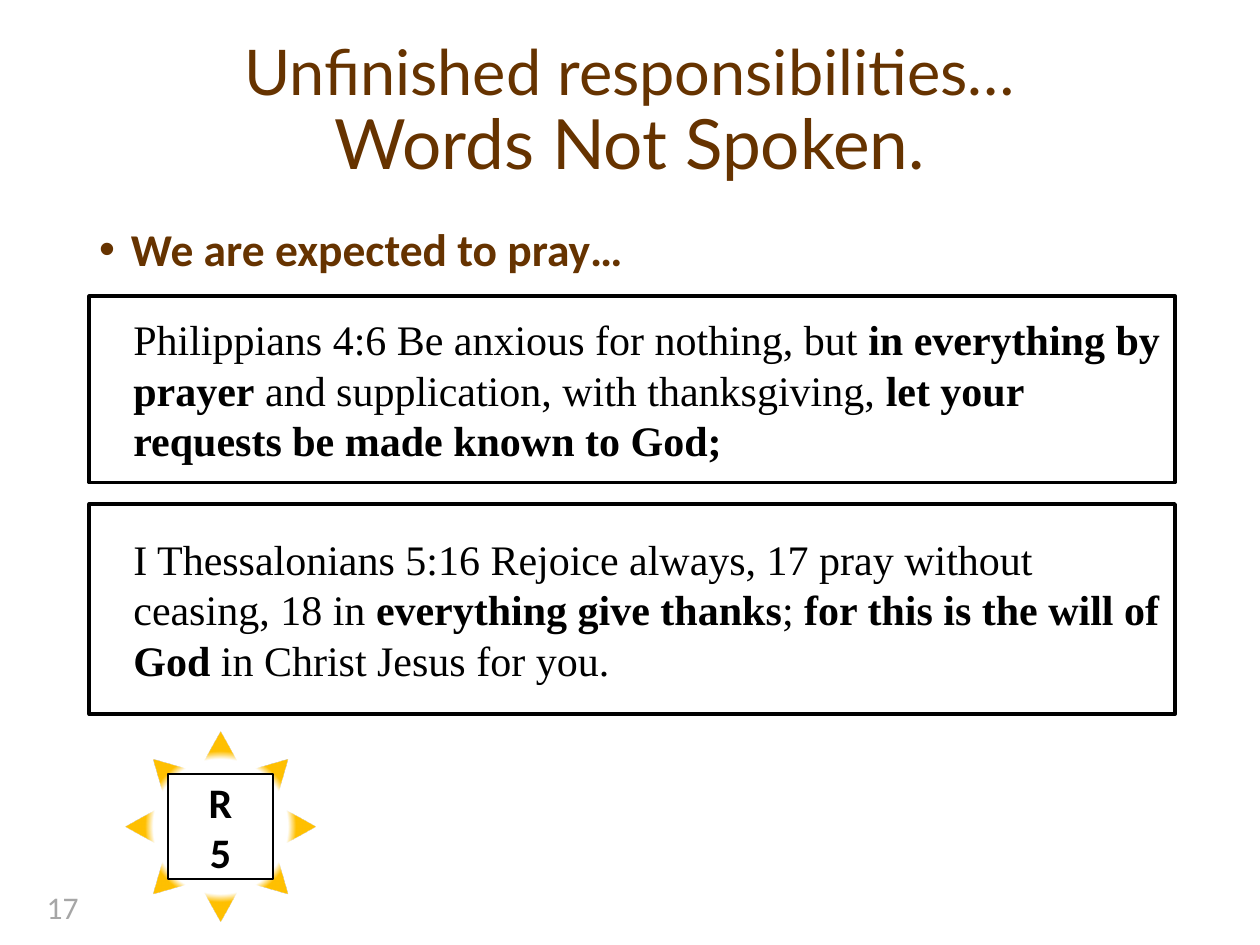
"""Build the slide on unfinished responsibilities and words not spoken."""
from lxml import etree
from pptx import Presentation
from pptx.dml.color import RGBColor
from pptx.enum.shapes import MSO_SHAPE
from pptx.enum.text import MSO_ANCHOR, MSO_AUTO_SIZE, PP_ALIGN
from pptx.oxml import parse_xml
from pptx.oxml.ns import nsdecls, qn
from pptx.util import Cm, Pt

BROWN = RGBColor(0x66, 0x33, 0x00)
BLACK = RGBColor(0x00, 0x00, 0x00)
WHITE = RGBColor(0xFF, 0xFF, 0xFF)
GREY = RGBColor(0xA6, 0xA6, 0xA6)
RECTANGLE, SUN = MSO_SHAPE.RECTANGLE, MSO_SHAPE.SUN
MIDDLE = MSO_ANCHOR.MIDDLE
CENTER, LEFT = PP_ALIGN.CENTER, PP_ALIGN.LEFT
FIXED = MSO_AUTO_SIZE.NONE
INDENT = Cm(0.64)
GLOW = f"""<a:gradFill {nsdecls("a")} rotWithShape="1"><a:gsLst>
<a:gs pos="0"><a:srgbClr val="FFFF00"><a:alpha val="0"/></a:srgbClr></a:gs>
<a:gs pos="50000"><a:srgbClr val="FFC000"><a:alpha val="0"/></a:srgbClr></a:gs>
<a:gs pos="56000"><a:srgbClr val="FFC000"/></a:gs></a:gsLst>
<a:path path="circle"><a:fillToRect l="50000" t="50000" r="50000" b="50000"/></a:path>
</a:gradFill>"""


class SlideWriter:
    """Hold the text style and the current page."""

    def __init__(self, page):
        self.page = page
        self.heading_font = "Lato"
        self.label_font = "Calibri"
        self.verse_font = "Times New Roman"

    def span(self, para, text, size, font, color, bold=False):
        """Add one formatted run."""
        span = para.add_run()
        span.text = text
        span.font.size = Pt(size)
        span.font.name = font
        span.font.bold = bold
        span.font.color.rgb = color

    def title(self, lines, left, top, width, height):
        """Fill the title placeholder with sized lines."""
        box = self.page.shapes.title
        box.left, box.top, box.width, box.height = map(Cm, (left, top, width, height))
        frame = box.text_frame
        frame.auto_size = FIXED
        frame.vertical_anchor = MIDDLE
        para = frame.paragraphs[0]
        para.alignment = CENTER
        para.line_spacing = 0.9
        for index, (text, size) in enumerate(lines):
            if index:
                para.add_line_break()
            self.span(para, text, size, self.heading_font, BROWN)

    def text(self, text, left, top, width, height, size, color, bold=False):
        """Add a text box and return its paragraph."""
        box = self.page.shapes.add_textbox(*map(Cm, (left, top, width, height)))
        box.text_frame.word_wrap = True
        para = box.text_frame.paragraphs[0]
        self.span(para, text, size, self.label_font, color, bold)
        return para

    def bullet(self, text, left, top, width, height):
        """Add a bulleted statement."""
        para = self.text(text, left, top, width, height, 26, BROWN, True)
        para.line_spacing = 0.9
        properties = para._p.get_or_add_pPr()
        properties.set("marL", str(INDENT))
        properties.set("indent", str(-INDENT))
        etree.SubElement(properties, qn("a:buFont")).set("typeface", "Arial")
        etree.SubElement(properties, qn("a:buChar")).set("char", "•")

    def panel(self, left, top, width, height, line_width):
        """Add a white outlined rectangle and return its text frame."""
        box = self.page.shapes.add_shape(RECTANGLE, *map(Cm, (left, top, width, height)))
        box.shadow.inherit = False
        box.fill.solid()
        box.fill.fore_color.rgb = WHITE
        box.line.color.rgb = BLACK
        box.line.width = Pt(line_width)
        box.text_frame.word_wrap = True
        box.text_frame.vertical_anchor = MIDDLE
        return box.text_frame

    def verse(self, spans, top, height):
        """Add a framed verse with alternating plain and bold spans."""
        para = self.panel(1.8, top, 21.89, height, 2).paragraphs[0]
        para.alignment = LEFT
        para._p.get_or_add_pPr().set("marL", str(INDENT))
        for index, text in enumerate(spans):
            self.span(para, text, 24, self.verse_font, BLACK, index % 2 == 1)

    def sun_badge(self, lines, left, top, size, inner):
        """Add a glowing sun with a lettered square at its centre."""
        sun = self.page.shapes.add_shape(SUN, *map(Cm, (left, top, size, size)))
        sun.adjustments[0] = 0.19
        sun.shadow.inherit = False
        sun.line.fill.background()
        sun._element.spPr.find(qn("a:prstGeom")).addnext(parse_xml(GLOW))
        gap = (size - inner) / 2
        frame = self.panel(left + gap, top + gap, inner, inner, 1)
        for index, text in enumerate(lines):
            para = frame.add_paragraph() if index else frame.paragraphs[0]
            para.alignment = CENTER
            self.span(para, text, 24, self.label_font, BLACK, True)


def main():
    """Write the deck."""
    deck = Presentation()
    deck.slide_width, deck.slide_height = Cm(25.4), Cm(19.05)
    writer = SlideWriter(deck.slides.add_slide(deck.slide_layouts[5]))
    writer.bullet("We are expected to pray…", 1.75, 4.45, 21.89, 12.09)
    writer.title(
        [("Unfinished responsibilities…", 36), ("Words Not Spoken.", 39.6)],
        1.75, 0.43, 21.89, 3.68,
    )
    writer.verse(
        [
            "Philippians 4:6 Be anxious for nothing, but",
            " in everything by prayer",
            " and supplication, with thanksgiving, ",
            "let your requests be made known to God;",
        ],
        5.97, 3.76,
    )
    writer.verse(
        [
            "I Thessalonians 5:16 Rejoice always, 17 pray without ceasing, 18 in ",
            "everything give thanks",
            "; ",
            "for this is the will of God ",
            "in Christ Jesus for you.",
        ],
        10.16, 4.24,
    )
    writer.sun_badge(["R", "5"], 2.54, 14.76, 3.81, 2.11)
    writer.text("17", 0.69, 17.78, 3.12, 1.02, 18, GREY)
    deck.save("out.pptx")


if __name__ == "__main__":
    main()
